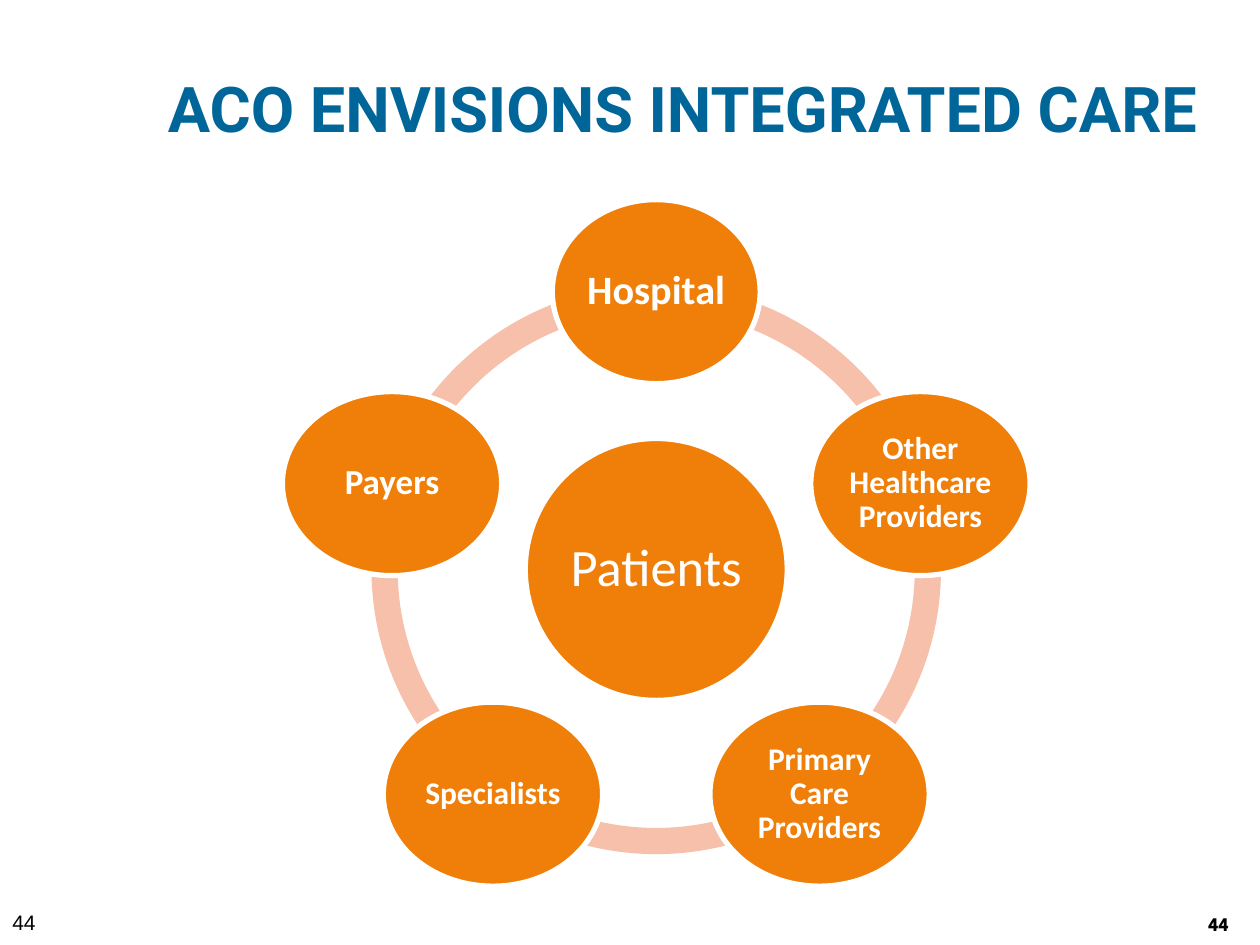
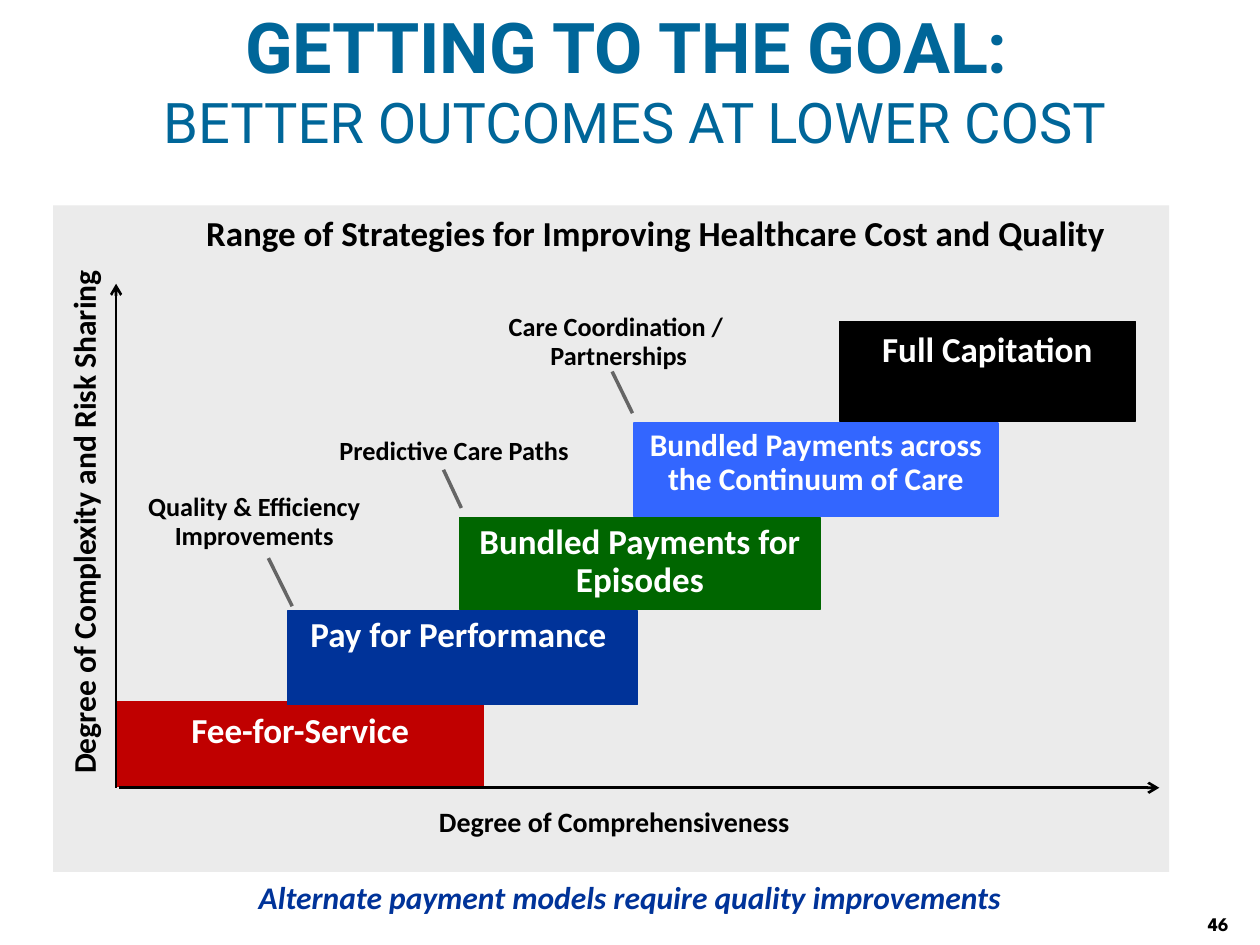
from math import cos, radians, sin

from lxml import etree
from pptx import Presentation
from pptx.dml.color import RGBColor
from pptx.enum.shapes import MSO_CONNECTOR, MSO_SHAPE as SHAPE
from pptx.enum.text import MSO_ANCHOR as ANCHOR, PP_ALIGN as ALIGN
from pptx.oxml.ns import qn
from pptx.util import Cm, Pt

# Shared style
BLUE, NAVY, ORANGE, PEACH = "006699", "003399", "F07F09", "F6C0AB"
BLACK, WHITE, PANEL, GREY = "000000", "FFFFFF", "EBEBEB", "656565"
BODY, HEAD, NUMBER = "Calibri", "Roboto", "League Spartan"
INSETS = (0.25, 0.13, 0.25, 0.13)


def rgb(color):
    return RGBColor.from_string(color)


class Deck:
    """Holds the presentation, its style and the current slide."""

    def __init__(self):
        self.prs = Presentation()
        self.prs.slide_width, self.prs.slide_height = Cm(25.4), Cm(19.05)

    def new_slide(self, number):
        self.slide = self.prs.slides.add_slide(self.prs.slide_layouts[6])
        self.text((23.5, 17.83, 1.27, 1.02), number, 11, font=NUMBER,
                  align=ALIGN.RIGHT, anchor=ANCHOR.BOTTOM, insets=(0, 0.13, 0, 0))

    def run(self, p, text, size, color=BLACK, bold=True, italic=False, font=BODY):
        r = p.add_run()
        r.text = text
        r.font.size, r.font.name = Pt(size), font
        r.font.bold, r.font.italic = bold, italic
        r.font.color.rgb = rgb(color)

    def frame(self, sp, anchor=ANCHOR.TOP, insets=INSETS, wrap=True):
        tf = sp.text_frame
        tf.word_wrap, tf.vertical_anchor = wrap, anchor
        (tf.margin_left, tf.margin_top,
         tf.margin_right, tf.margin_bottom) = map(Cm, insets)
        return tf

    def paragraphs(self, tf, lines, size, align=ALIGN.CENTER, spacing=1.0, **style):
        """Each item of lines becomes a paragraph; a newline breaks the line."""
        for i, line in enumerate(lines):
            p = tf.add_paragraph() if i else tf.paragraphs[0]
            p.alignment, p.line_spacing = align, spacing
            for j, part in enumerate(line.split("\n")):
                if j:
                    p.add_line_break()
                self.run(p, part, size, **style)

    def text(self, box, text, size, anchor=ANCHOR.TOP, insets=INSETS,
             rotation=0, **style):
        sp = self.slide.shapes.add_textbox(*map(Cm, box))
        sp.rotation = rotation
        self.paragraphs(self.frame(sp, anchor, insets), [text], size, **style)

    def title(self, box, parts, anchor=ANCHOR.TOP, insets=INSETS):
        sp = self.slide.shapes.add_textbox(*map(Cm, box))
        p = self.frame(sp, anchor, insets).paragraphs[0]
        p.alignment = ALIGN.CENTER
        for i, (text, size, bold) in enumerate(parts):
            if i:
                p.add_line_break()
            self.run(p, text, size, BLUE, bold, font=HEAD)

    def shape(self, kind, box, fill, line=None, width=0.75):
        sp = self.slide.shapes.add_shape(kind, *map(Cm, box))
        sp.shadow.inherit = False
        sp.fill.solid()
        sp.fill.fore_color.rgb = rgb(fill)
        if line:
            sp.line.color.rgb, sp.line.width = rgb(line), Pt(width)
        else:
            sp.line.fill.background()
        return sp

    def arc(self, box, start, end, thickness, fill):
        sp = self.shape(SHAPE.BLOCK_ARC, box, fill)
        # Angles are stored in 60000ths of a degree, adjustments in 100000ths
        for i, value in enumerate((start * 0.6, end * 0.6, thickness)):
            sp.adjustments[i] = value

    def bubble(self, x, y, w, h, text, size, bold=True):
        sp = self.shape(SHAPE.OVAL, (x - w / 2, y - h / 2, w, h), ORANGE, WHITE, 3)
        tf = self.frame(sp, ANCHOR.MIDDLE, (0.08,) * 4)
        self.paragraphs(tf, [text], size, spacing=0.9, color=WHITE, bold=bold)

    def block(self, box, lines, size, fill, spacing=0.9, wrap=True):
        sp = self.shape(SHAPE.RECTANGLE, box, fill, fill)
        self.paragraphs(self.frame(sp, wrap=wrap), lines, size,
                        spacing=spacing, color=WHITE)

    def line(self, ends, color, width, arrow=False):
        sp = self.slide.shapes.add_connector(MSO_CONNECTOR.STRAIGHT, *map(Cm, ends))
        sp.line.color.rgb, sp.line.width = rgb(color), Pt(width)
        props = sp.element.spPr
        if arrow:
            etree.SubElement(props.find(qn("a:ln")), qn("a:tailEnd"), type="arrow")
        etree.SubElement(props, qn("a:effectLst"))


def integrated_care(deck):
    deck.new_slide("44")
    deck.title((2.97, 1.27, 21.59, 1.7), [("ACO ENVISIONS INTEGRATED CARE", 36, True)])
    deck.text((0, 18.21, 1.07, 0.84), "44", 12, align=ALIGN.LEFT, bold=False, font="Arial")

    # Ring of arcs between the partners, clockwise from the top
    cx, cy, radius, ring, step = 13.23, 11.48, 5.6, 11.48, 72
    partners = [("Hospital", 23, 4.19), ("Other Healthcare Providers", 18, 4.42),
                ("Primary Care Providers", 18, 4.42), ("Specialists", 18, 4.42),
                ("Payers", 20, 4.42)]
    angles = [(270 + step * i) % 360 for i in range(len(partners))]
    for angle in angles:
        deck.arc((cx - ring / 2, cy - ring / 2, ring, ring),
                 angle, (angle + step) % 360, 0.046, PEACH)

    # Patients in the middle, partners around them
    deck.bubble(cx, cy, 5.28, 5.28, "Patients", 30, bold=False)
    for angle, (name, size, width) in zip(angles, partners):
        a = radians(angle)
        deck.bubble(cx + radius * cos(a), cy + radius * sin(a), width, 3.71, name, size)


def getting_to_the_goal(deck):
    deck.new_slide("46")
    deck.shape(SHAPE.RECTANGLE, (1.07, 4.14, 22.5, 13.44), PANEL)
    deck.title((0.64, 0, 24.33, 3.18),
               [("GETTING TO THE GOAL: ", 40, True),
                ("BETTER OUTCOMES AT LOWER COST", 32, False)],
               ANCHOR.MIDDLE, (0, 0.13, 0, 0.13))
    deck.text((3.58, 4.14, 19.28, 1.12),
              "Range of Strategies for Improving Healthcare Cost and Quality", 20)

    # Payment models, as a staircase
    deck.block((2.36, 14.15, 7.39, 1.7), ["Fee-for-Service"], 20, "C00000", 1.0, False)
    deck.block((9.27, 10.44, 7.26, 1.85), ["Bundled Payments for Episodes"], 20, "006600")
    deck.block((16.92, 6.48, 5.97, 2.01), ["Full Capitation"], 20, BLACK, 1.0, False)
    deck.block((12.78, 8.53, 7.34, 1.88),
               ["Bundled Payments across", "the Continuum of Care"], 18, "3366FF")
    deck.block((5.79, 12.32, 7.06, 1.88), ["Pay for Performance "], 20, NAVY)

    # Axes and their labels
    deck.line((2.34, 15.88, 2.34, 5.72), BLACK, 1.5, arrow=True)
    deck.line((2.39, 15.88, 23.37, 15.88), BLACK, 1.5, arrow=True)
    deck.text((-5.51, 8.15, 14.38, 1.02), "Degree of Complexity and Risk Sharing", 18,
              rotation=270, align=ALIGN.LEFT)
    deck.text((7.85, 16.08, 9.07, 0.94), "Degree of Comprehensiveness", 16)
    deck.text((0, 17.58, 25.4, 1.02),
              "Alternate payment models require quality improvements", 18,
              color=NAVY, italic=True)

    # Callouts with their pointers
    callouts = [
        ("Quality & Efficiency Improvements",
         (1.91, 9.83, 6.43, 1.4), (5.41, 11.25, 5.89, 12.22)),
        ("Predictive Care Paths",
         (6.55, 8.69, 5.21, 0.84), (8.94, 9.47, 9.3, 10.24)),
        ("Care Coordination / \nPartnerships",
         (9.96, 6.2, 5.03, 2.06), (12.34, 7.49, 12.75, 8.33)),
    ]
    for label, box, pointer in callouts:
        deck.text(box, label, 15, spacing=0.9)
        deck.line(pointer, GREY, 2)


def main():
    deck = Deck()
    integrated_care(deck)
    getting_to_the_goal(deck)
    deck.prs.save("out.pptx")


if __name__ == "__main__":
    main()
